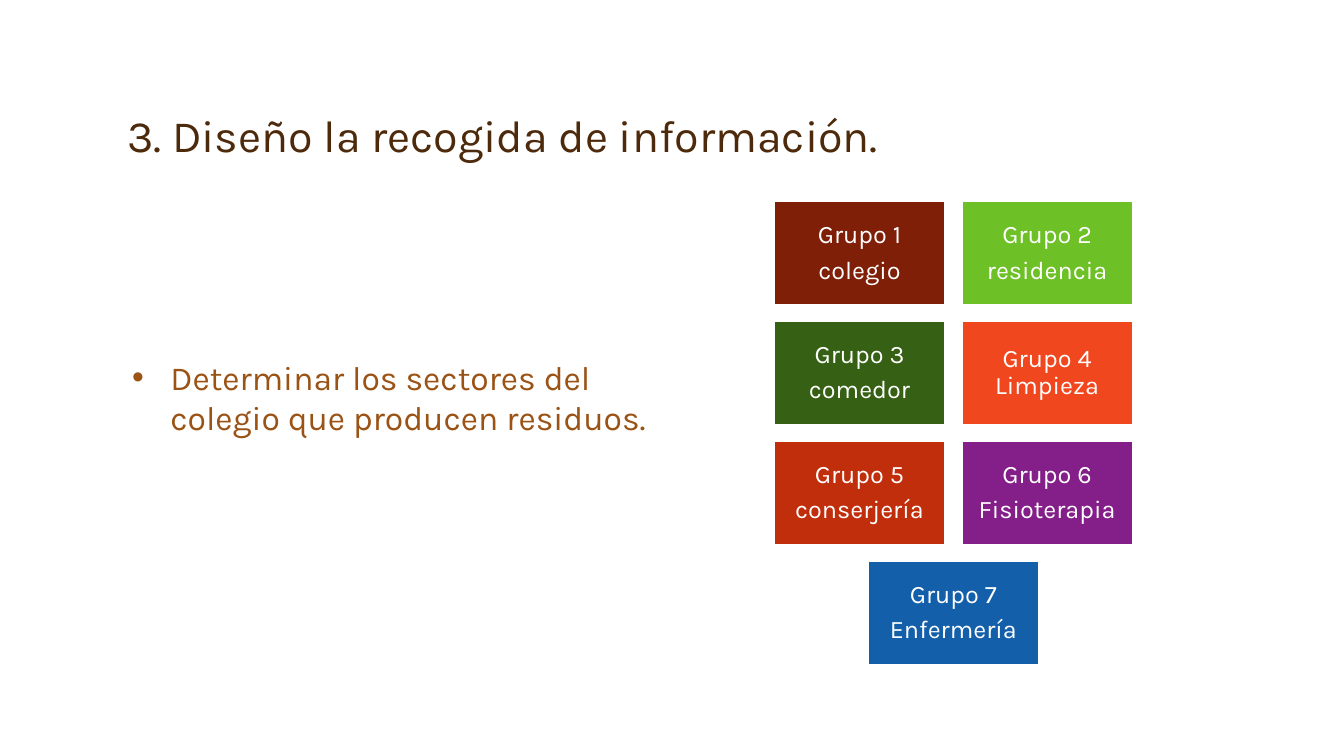
from lxml.etree import SubElement
from pptx import Presentation
from pptx.dml.color import RGBColor
from pptx.enum.shapes import MSO_SHAPE
from pptx.enum.text import MSO_ANCHOR, MSO_AUTO_SIZE, PP_ALIGN
from pptx.oxml.ns import qn
from pptx.util import Inches, Pt

FONT = "Karla"
WHITE = RGBColor(0xFF, 0xFF, 0xFF)
TITLE_BROWN = RGBColor(0x4D, 0x2A, 0x0B)
BODY_BROWN = RGBColor(0x9A, 0x53, 0x15)
MAROON = RGBColor(0x80, 0x1F, 0x08)
LIME = RGBColor(0x6D, 0xC0, 0x25)
GREEN = RGBColor(0x36, 0x60, 0x13)
ORANGE = RGBColor(0xF1, 0x47, 0x1F)
RED = RGBColor(0xC0, 0x2E, 0x0C)
PURPLE = RGBColor(0x84, 0x1E, 0x89)
BLUE = RGBColor(0x14, 0x5F, 0xAA)

GROUPS = [
    (["Grupo 1", "colegio"], MAROON),
    (["Grupo 2", "residencia"], LIME),
    (["Grupo 3", "comedor"], GREEN),
    (["Grupo 4 Limpieza"], ORANGE),
    (["Grupo 5", "conserjería"], RED),
    (["Grupo 6", "Fisioterapia"], PURPLE),
    (["Grupo 7", "Enfermería"], BLUE),
]
COLUMNS = 2
GRID_LEFT, GRID_TOP = 7.68, 2.0
CARD_WIDTH, CARD_HEIGHT = 1.69, 1.02
COLUMN_STEP, ROW_STEP = 1.86, 1.19


def write_text(paragraph, text, *, size, color, align=PP_ALIGN.LEFT,
               line_spacing=0.9, space_after=0):
    """Fill a paragraph with one formatted run."""
    paragraph.alignment = align
    paragraph.line_spacing = line_spacing
    paragraph.space_before = Pt(0)
    paragraph.space_after = Pt(space_after)
    run = paragraph.add_run()
    run.text = text
    run.font.name = FONT
    run.font.size = Pt(size)
    run.font.color.rgb = color


def place(shape, left, top, width, height):
    """Move and resize a placeholder, lengths in inches."""
    shape.left, shape.top = Inches(left), Inches(top)
    shape.width, shape.height = Inches(width), Inches(height)
    shape.text_frame.auto_size = MSO_AUTO_SIZE.NONE


def add_bullet(paragraph, indent):
    """Give a paragraph a round bullet with a hanging indent."""
    properties = paragraph._p.get_or_add_pPr()
    properties.set("marL", str(Inches(indent)))
    properties.set("indent", str(-Inches(indent)))
    SubElement(properties, qn("a:buFont")).set("typeface", "Arial")
    SubElement(properties, qn("a:buChar")).set("char", "•")


def fill_title(title, text):
    """Format the slide title."""
    place(title, 1.16, 0.33, 11, 1.33)
    title.text_frame.vertical_anchor = MSO_ANCHOR.BOTTOM
    write_text(title.text_frame.paragraphs[0], text, size=32, color=TITLE_BROWN)


def fill_body(body, text):
    """Format the bulleted body."""
    place(body, 1.21, 3.49, 5.59, 1.39)
    body.text_frame.vertical_anchor = MSO_ANCHOR.TOP
    paragraph = body.text_frame.paragraphs[0]
    add_bullet(paragraph, 0.38)
    write_text(paragraph, text, size=24, color=BODY_BROWN, line_spacing=1.0)


def add_card(slide, left, top, lines, color):
    """Add one coloured group card with centred text."""
    card = slide.shapes.add_shape(
        MSO_SHAPE.RECTANGLE, Inches(left), Inches(top),
        Inches(CARD_WIDTH), Inches(CARD_HEIGHT))
    card.shadow.inherit = False
    card.fill.solid()
    card.fill.fore_color.rgb = color
    card.line.color.rgb = WHITE
    card.line.width = Pt(1)
    frame = card.text_frame
    frame.word_wrap = True
    frame.vertical_anchor = MSO_ANCHOR.MIDDLE
    frame.margin_left = frame.margin_right = Inches(0.1)
    frame.margin_top = frame.margin_bottom = Inches(0.1)
    for index, line in enumerate(lines):
        paragraph = frame.add_paragraph() if index else frame.paragraphs[0]
        write_text(paragraph, line, size=18, color=WHITE,
                   align=PP_ALIGN.CENTER, space_after=6)


def add_cards(slide):
    """Lay the cards out in rows, centring an incomplete last row."""
    for index, (lines, color) in enumerate(GROUPS):
        row, column = divmod(index, COLUMNS)
        cards_in_row = min(COLUMNS, len(GROUPS) - row * COLUMNS)
        offset = column + (COLUMNS - cards_in_row) / 2
        add_card(slide, GRID_LEFT + offset * COLUMN_STEP,
                 GRID_TOP + row * ROW_STEP, lines, color)


def main():
    """Build and save the slide."""
    presentation = Presentation()
    presentation.slide_width = Inches(13.33)
    presentation.slide_height = Inches(7.5)
    slide = presentation.slides.add_slide(presentation.slide_layouts[1])
    fill_title(slide.shapes.title, "3. Diseño la recogida de información.")
    fill_body(slide.placeholders[1],
              "Determinar los sectores del colegio que producen residuos.")
    add_cards(slide)
    presentation.save("out.pptx")


if __name__ == "__main__":
    main()
